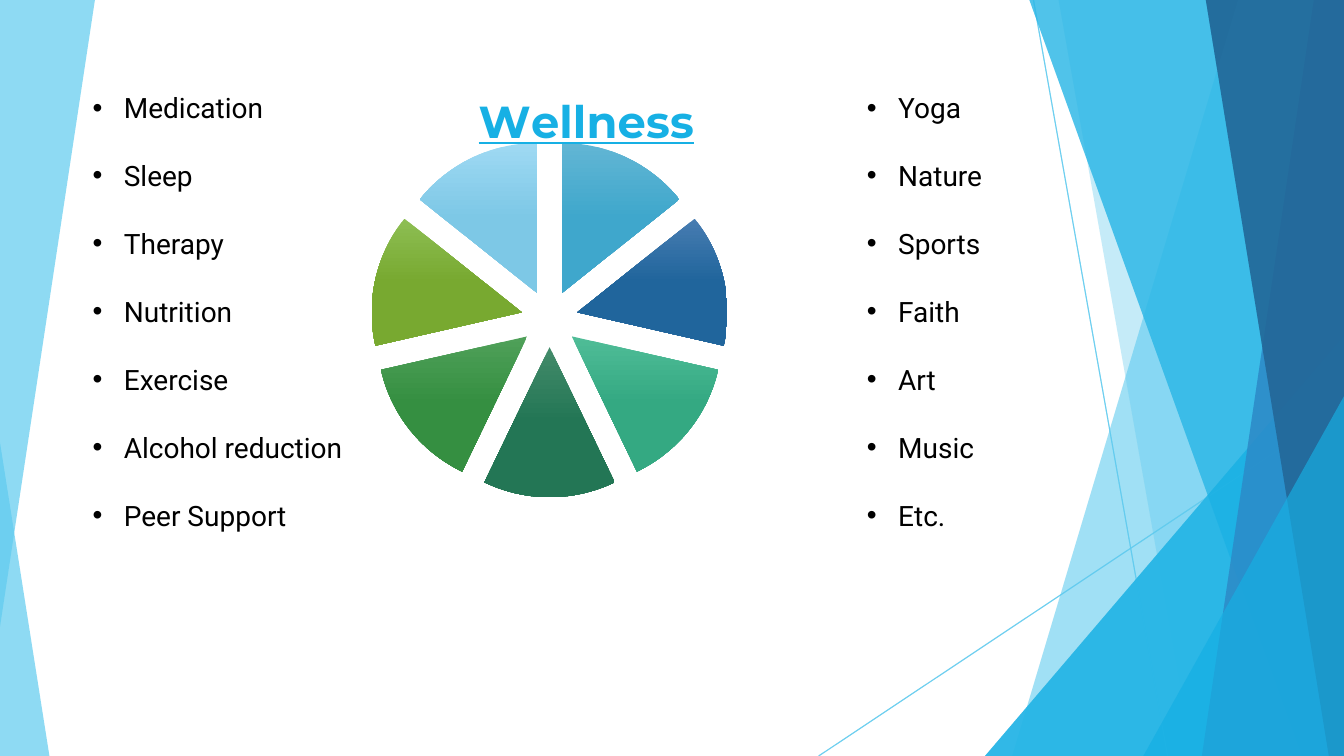
import pptx
import pptx.chart.data
import pptx.dml.color
import pptx.enum.chart
import pptx.enum.shapes
import pptx.enum.text
import pptx.oxml.ns
import pptx.util
from dataclasses import dataclass
from lxml import etree

PX = 9144  # EMU per px, 100 px to the inch
qn = pptx.oxml.ns.qn


@dataclass(frozen=True)
class Theme:
    sky: str = "5FCBEF"
    cyan: str = "17B0E4"
    blue: str = "2E83C3"
    navy: str = "226292"
    text: str = "000000"
    heading_font: str = "Montserrat"
    body_font: str = "Roboto"
    title_size: int = 32
    chart_size: int = 18
    list_size: int = 20
    list_gap: float = 24.5
    # Top and lower colour of each slice
    slices: tuple = (("62B6D4", "3FA7CC"), ("477CB1", "20659C"),
                     ("4FBC97", "34A982"), ("438B6A", "237655"),
                     ("4FA059", "358F41"), ("8DBE53", "78A930"),
                     ("9FD9F3", "7DC8E6"))


THEME = Theme()
WIDTH, HEIGHT = 1333, 750
LEFT_ITEMS = ["Medication", "Sleep", "Therapy", "Nutrition", "Exercise",
              "Alcohol reduction", "Peer Support"]
RIGHT_ITEMS = ["Yoga", "Nature", "Sports", "Faith", "Art", "Music", "Etc."]


def px(*lengths):
    return [pptx.util.Emu(n * PX) for n in lengths]


def rgb(color):
    return pptx.dml.color.RGBColor.from_string(color)


def add_child(parent, tag, **attributes):
    return etree.SubElement(parent, qn(tag), attributes)


def set_opacity(shape, percent):
    for color in shape._element.spPr.iter(qn("a:srgbClr")):
        add_child(color, "a:alpha", val=str(percent * 1000))


def paint(shape, color, opacity):
    shape.shadow.inherit = False
    shape.fill.solid()
    shape.fill.fore_color.rgb = rgb(color)
    shape.line.fill.background()
    set_opacity(shape, opacity)


def add_facet(s, points, color, opacity):
    start, *rest = [px(*point) for point in points]
    builder = s.shapes.build_freeform(*start)
    builder.add_line_segments(rest, close=True)
    paint(builder.convert_to_shape(), color, opacity)


def add_triangle(s, box, apex, color, opacity):
    kind = pptx.enum.shapes.MSO_SHAPE.ISOSCELES_TRIANGLE
    sp = s.shapes.add_shape(kind, *px(*box))
    sp.adjustments[0] = apex
    paint(sp, color, opacity)


def add_line(s, *ends):
    kind = pptx.enum.shapes.MSO_CONNECTOR.STRAIGHT
    line = s.shapes.add_connector(kind, *px(*ends))
    line.line.color.rgb = rgb(THEME.sky)
    line.line.width = pptx.util.Pt(0.75)
    set_opacity(line, 70)
    add_child(line._element.spPr, "a:effectLst")


def add_right_facets(s):
    def facet(top, bottom, color, opacity):
        corners = [(top, 0), (WIDTH, 0), (WIDTH, HEIGHT), (bottom, HEIGHT)]
        add_facet(s, corners, color, opacity)

    add_line(s, 1025, 0, 1158, HEIGHT)
    add_line(s, WIDTH, 403, 812, HEIGHT)
    facet(1228, 1004, THEME.sky, 36)
    facet(1050, 1183, THEME.sky, 20)
    add_triangle(s, (977, 333, 356, 417), 1, THEME.cyan, 66)
    facet(1021, 1291, THEME.cyan, 50)
    facet(1303, 1192, THEME.blue, 70)
    facet(1196, 1318, THEME.navy, 80)
    add_triangle(s, (1134, 393, 199, 357), 1, THEME.cyan, 66)


def add_text(p, text, font=THEME.body_font, size=THEME.list_size,
             color=THEME.text, bold=False, underline=False):
    r = p.add_run()
    r.text = text
    r.font.name = font
    r.font.size = pptx.util.Pt(size)
    r.font.color.rgb = rgb(color)
    r.font.bold = bold
    r.font.underline = underline


def add_list(s, box, items):
    tf = s.shapes.add_textbox(*px(*box)).text_frame
    tf.word_wrap = True
    tf.auto_size = pptx.enum.text.MSO_AUTO_SIZE.SHAPE_TO_FIT_TEXT
    for i, item in enumerate(items):
        p = tf.add_paragraph() if i else tf.paragraphs[0]
        if i:
            p.space_before = pptx.util.Pt(THEME.list_gap)
        indent = 31 * PX
        pPr = p._p.get_or_add_pPr()
        pPr.set("marL", str(indent))
        pPr.set("indent", str(-indent))
        add_child(pPr, "a:buFont", typeface="Arial")
        add_child(pPr, "a:buChar", char="•")
        add_text(p, item)


def set_layout(parent, index, **values):
    layout = parent.find(qn("c:layout"))
    if layout is None:
        layout = etree.Element(qn("c:layout"))
        parent.insert(index, layout)
    manual = add_child(layout, "c:manualLayout")
    for name, value in values.items():
        add_child(manual, f"c:{name}", val=str(value))


def explode(anchor, percent):
    explosion = etree.Element(qn("c:explosion"), val=str(percent))
    anchor.addprevious(explosion)


def add_wellness_pie(s, box):
    data = pptx.chart.data.CategoryChartData()
    data.categories = [str(n + 1) for n in range(len(THEME.slices))]
    data.add_series("Series 1", [14] * len(THEME.slices))
    kind = pptx.enum.chart.XL_CHART_TYPE.PIE
    chart = s.shapes.add_chart(kind, *px(*box), data).chart
    chart.has_legend = False
    chart.font.name = THEME.body_font
    chart.font.size = pptx.util.Pt(THEME.chart_size)
    chart.font.color.rgb = rgb(THEME.text)

    # Title
    chart.has_title = True
    title = chart.chart_title
    add_text(title.text_frame.paragraphs[0], "Wellness", bold=True,
             font=THEME.heading_font, size=THEME.title_size,
             color=THEME.cyan, underline=True)
    set_layout(title._element, 1, xMode="edge", yMode="edge", x=0.21, y=0.03)
    plot_area = chart._chartSpace.chart.plotArea
    set_layout(plot_area, 0, layoutTarget="inner", xMode="edge",
               yMode="edge", x=0.026, y=0.156, w=0.661, h=0.803)

    # Slices
    series = chart.plots[0].series[0]
    for i, colors in enumerate(THEME.slices):
        fill = series.points[i].format.fill
        fill.gradient()
        fill.gradient_angle = 270
        for stop, color, place in zip(fill.gradient_stops, colors, (0, 0.5)):
            stop.color.rgb = rgb(color)
            stop.position = place
    slices = series._element.findall(qn("c:dPt"))
    explode(slices[0], 19)
    for point in slices:
        explode(point.find(qn("c:spPr")), 19)


def main():
    prs = pptx.Presentation()
    prs.slide_width, prs.slide_height = px(WIDTH, HEIGHT)
    s = prs.slides.add_slide(prs.slide_layouts[6])

    # Two layers of facets
    add_right_facets(s)
    add_triangle(s, (0, 439, 49, 311), 0, THEME.sky, 70)
    add_facet(s, [(0, 0), (94, 0), (94, 1), (0, 622)], THEME.sky, 70)
    add_right_facets(s)

    # Wheel between the two lists
    add_wellness_pie(s, (354, 67, 536, 447))
    add_list(s, (82, 85, 272, 448), LEFT_ITEMS)
    add_list(s, (850, 85, 143, 448), RIGHT_ITEMS)
    prs.save("out.pptx")


if __name__ == "__main__":
    main()
